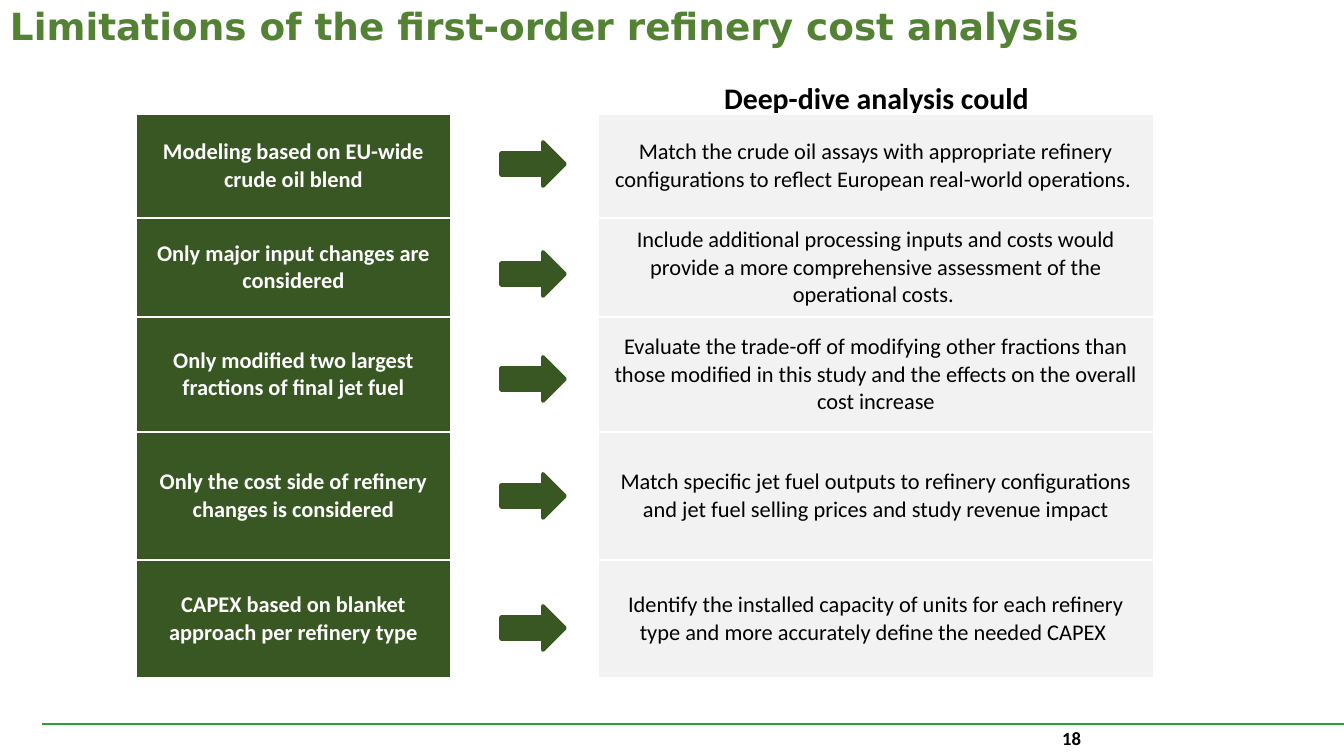
import pptx
import pptx.util
import pptx.dml.color
import pptx.enum.shapes
import pptx.enum.text
import pptx.oxml.ns
from lxml import etree

PX = 914400 / 134.4  # EMU in one px
GREEN = "385723"
ALIGN = pptx.enum.text.PP_ALIGN
MIDDLE = pptx.enum.text.MSO_ANCHOR.MIDDLE


def color(value):
    return pptx.dml.color.RGBColor.from_string(value)


def write(frame, text, align, size, ink, bold=True, font="Calibri"):
    para = frame.paragraphs[0]
    para.alignment = align
    span = para.add_run()
    span.text = text
    style = {"name": font, "size": pptx.util.Pt(size), "bold": bold}
    for name, value in style.items():
        setattr(span.font, name, value)
    span.font.color.rgb = color(ink)


deck = pptx.Presentation()
deck.slide_width, deck.slide_height = round(1344 * PX), round(756 * PX)
page = deck.slides.add_slide(deck.slide_layouts[5])

# Footer rule
left, top, right = [round(n * PX) for n in (42, 724, 1344)]
rule = page.shapes.add_connector(
    pptx.enum.shapes.MSO_CONNECTOR.STRAIGHT, left, top, right, top)
rule.line.color.rgb = color("29A23F")
rule.line.width = pptx.util.Pt(1.5)
etree.SubElement(rule._element.spPr, pptx.oxml.ns.qn("a:effectLst"))

# Title, column heading and page number
title = page.shapes.title
heading = page.shapes.add_textbox(0, 0, 0, 0)
number = page.shapes.add_textbox(0, 0, 0, 0)
places = [(title, (0, -1, 1302, 58)), (heading, (683, 73, 387, 50)),
          (number, (1008, 727, 83, 23))]
for box, place in places:
    for name, length in zip(("left", "top", "width", "height"), place):
        setattr(box, name, round(length * PX))
    box.text_frame.word_wrap = True
for box in (title, number):
    frame = box.text_frame
    frame.vertical_anchor = MIDDLE
    frame.margin_left = frame.margin_right = round(10 * PX)
    frame.margin_top = frame.margin_bottom = round(5 * PX)
write(title.text_frame, "Limitations of the first-order refinery cost analysis",
      ALIGN.LEFT, 20, "548235", font="DejaVu Sans")
title.text_frame.paragraphs[0].line_spacing = 0.9
write(heading.text_frame, "Deep-dive analysis could", ALIGN.CENTER, 16, "000000")
write(number.text_frame, "18", ALIGN.RIGHT, 10, "000000")

# Limitations on the left, possible deeper analysis on the right
row_heights = [104, 99, 115, 128, 118]
limitations = [
    "Modeling based on EU-wide crude oil blend",
    "Only major input changes are considered",
    "Only modified two largest fractions of final jet fuel",
    "Only the cost side of refinery changes is considered",
    "CAPEX based on blanket approach per refinery type",
]
deep_dives = [
    "Match the crude oil assays with appropriate refinery configurations "
    "to reflect European real-world operations. ",
    "Include additional processing inputs and costs would provide a more "
    "comprehensive assessment of the operational costs. ",
    "Evaluate the trade-off of modifying other fractions than those modified "
    "in this study and the effects on the overall cost increase",
    "Match specific jet fuel outputs to refinery configurations and jet fuel "
    "selling prices and study revenue impact",
    "Identify the installed capacity of units for each refinery type and more "
    "accurately define the needed CAPEX ",
]
columns = [(136, 315, limitations, GREEN, "FFFFFF", True),
           (598, 556, deep_dives, "F2F2F2", "000000", False)]
for left, width, texts, fill, ink, bold in columns:
    table = page.shapes.add_table(
        len(texts), 1, round(left * PX), round(114 * PX),
        round(width * PX), round(sum(row_heights) * PX)).table
    table.first_row = table.horz_banding = False
    for row, height, text in zip(table.rows, row_heights, texts):
        row.height = round(height * PX)
        cell = row.cells[0]
        cell.vertical_anchor = MIDDLE
        write(cell.text_frame, text, ALIGN.CENTER, 12, ink, bold)
        # White borders go ahead of the fill
        for side in ("a:lnL", "a:lnR", "a:lnT", "a:lnB"):
            border = etree.SubElement(
                cell._tc.get_or_add_tcPr(), pptx.oxml.ns.qn(side), w="12700")
            solid = etree.SubElement(border, pptx.oxml.ns.qn("a:solidFill"))
            etree.SubElement(solid, pptx.oxml.ns.qn("a:srgbClr"), val="FFFFFF")
        cell.fill.solid()
        cell.fill.fore_color.rgb = color(fill)

# Arrows from each limitation to its remedy
for top in (142, 252, 357, 474, 606):
    arrow = page.shapes.add_shape(
        pptx.enum.shapes.MSO_SHAPE.RIGHT_ARROW,
        *[round(n * PX) for n in (501, top, 64, 44)])
    arrow.shadow.inherit = False
    arrow.fill.solid()
    arrow.fill.fore_color.rgb = color(GREEN)
    arrow.line.color.rgb = color(GREEN)
    arrow.line.width = pptx.util.Pt(2)
    etree.SubElement(arrow.line._get_or_add_ln(), pptx.oxml.ns.qn("a:round"))

deck.save("out.pptx")
